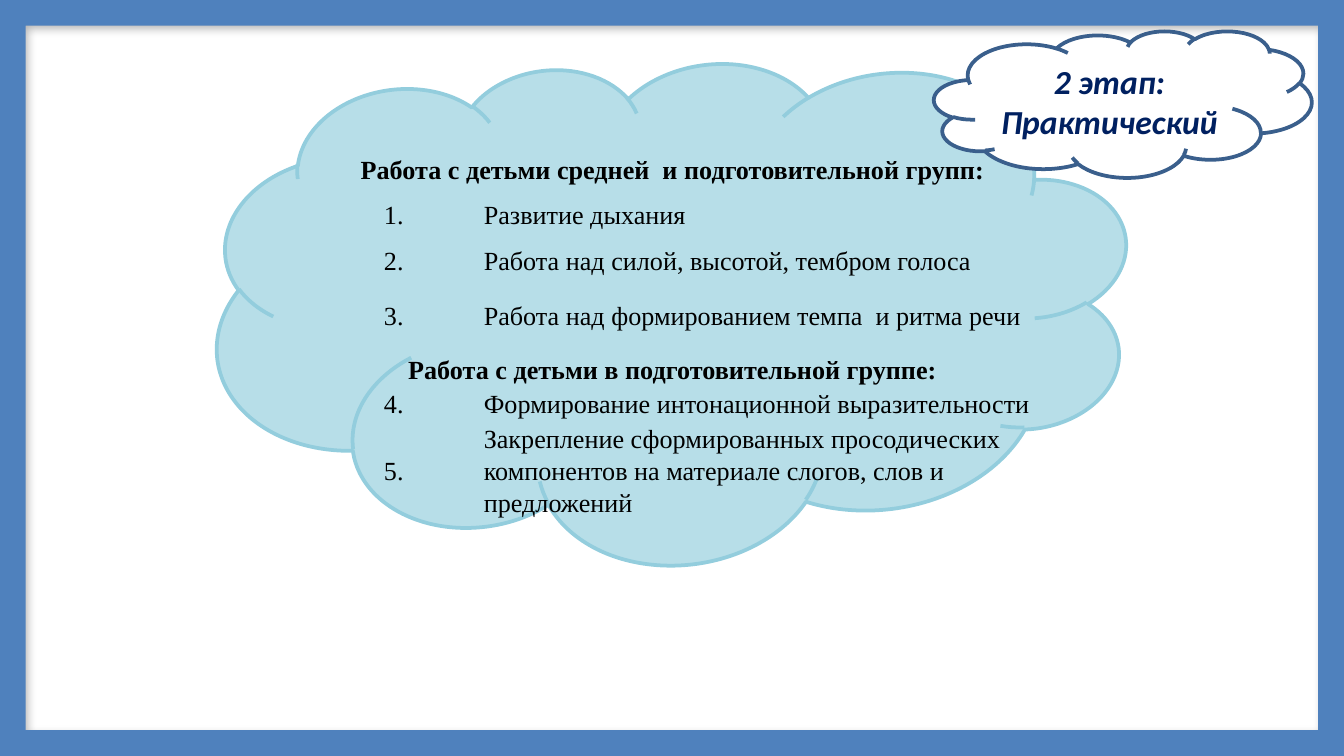
from pptx import Presentation
from pptx.dml.color import RGBColor
from pptx.enum.shapes import MSO_SHAPE
from pptx.enum.text import MSO_ANCHOR, PP_ALIGN
from pptx.oxml import parse_xml
from pptx.oxml.ns import nsdecls, qn
from pptx.util import Inches, Pt

PAGE_WIDTH = 10
PAGE_HEIGHT = PAGE_WIDTH * 9 / 16
NO_GRID_STYLE = "{2D5ABB26-0587-4C30-8999-92F81FD0307C}"
ROWS = [
    (0.24, "", "Работа с детьми средней  и подготовительной групп:"),
    (0.41, "1.", "Развитие дыхания"),
    (0.27, "2.", "Работа над силой, высотой, тембром голоса"),
    (0.55, "3.", "Работа над формированием темпа  и ритма речи"),
    (0.24, "", "Работа с детьми в подготовительной группе:"),
    (0.24, "4.", "Формирование интонационной выразительности"),
    (0.7, "5.", "Закрепление сформированных просодических компонентов "
                "на материале слогов, слов и предложений"),
]


def color(value):
    return RGBColor.from_string(value)


class StagePage:
    """Holds the style and the current slide of the stage page."""

    body_font = "Times New Roman"
    title_font = "Calibri"
    ink = "000000"
    navy = "002060"

    def __init__(self, deck):
        self.page = deck.slides.add_slide(deck.slide_layouts[6])

    def shape(self, kind, left, top, width, height, fill, line=None):
        shape = self.page.shapes.add_shape(
            kind, Inches(left), Inches(top), Inches(width), Inches(height))
        shape.shadow.inherit = False
        shape.fill.solid()
        shape.fill.fore_color.rgb = color(fill)
        if line:
            shape.line.color.rgb = color(line)
            shape.line.width = Pt(2)
        else:
            shape.line.fill.background()
        return shape

    def frame(self, width, height):
        frame = self.shape(MSO_SHAPE.FRAME, 0, 0, width, height, "4F81BD")
        frame.adjustments[0] = 0.034
        effects = frame.element.spPr.find(qn("a:effectLst"))
        effects.append(parse_xml(
            f'<a:outerShdw {nsdecls("a")} blurRad="{Pt(4.5)}" dist="{Pt(2.6)}" '
            f'dir="{53 * 60000}" algn="tl" rotWithShape="0"><a:srgbClr val="000000">'
            '<a:alpha val="30000"/></a:srgbClr></a:outerShdw>'))

    def back_cloud(self):
        cloud = self.shape(MSO_SHAPE.CLOUD, 1.6, 0.41, 6.81, 3.78, "B7DEE8", "93CDDD")
        cloud.rotation = 352.9
        cloud.element.spPr.get_or_add_xfrm().set("flipH", "1")

    def title_cloud(self, text):
        cloud = self.shape(MSO_SHAPE.CLOUD, 6.95, 0.23, 2.81, 1.09, "FFFFFF", "3A5F8C")
        cloud.text_frame.text = text
        cloud.text_frame.word_wrap = True
        cloud.text_frame.vertical_anchor = MSO_ANCHOR.MIDDLE
        para = cloud.text_frame.paragraphs[0]
        para.alignment = PP_ALIGN.CENTER
        self.style(para, self.title_font, 18, self.navy, bold=True, italic=True)

    def style(self, para, font, size, ink, bold=False, italic=False):
        for span in para.runs:
            span.font.name = font
            span.font.size = Pt(size)
            span.font.bold = bold
            span.font.italic = italic
            span.font.color.rgb = color(ink)

    def cell(self, cell, text, align, bold=False, spacing=Pt(17.1)):
        cell.text_frame.text = text
        para = cell.text_frame.paragraphs[0]
        para.alignment = align
        para.line_spacing = spacing
        self.style(para, self.body_font, 14, self.ink, bold)

    def work_table(self, rows):
        frame = self.page.shapes.add_table(
            len(rows), 2, Inches(2.27), Inches(1.13), Inches(5.47), Inches(2.65))
        table = frame.table
        table.first_row = table.horz_banding = False
        table._tbl.tblPr.find(qn("a:tableStyleId")).text = NO_GRID_STYLE
        for column, width in zip(table.columns, (1.32, 4.15)):
            column.width = Inches(width)
        for cell in table.iter_cells():
            cell.fill.background()
            cell.vertical_anchor = MSO_ANCHOR.MIDDLE
            cell.margin_left = cell.margin_right = Inches(0.01)
            cell.margin_top = cell.margin_bottom = Inches(0.01)
        for index, (height, number, text) in enumerate(rows):
            table.rows[index].height = Inches(height)
            first, second = table.cell(index, 0), table.cell(index, 1)
            if number:
                self.cell(first, number, PP_ALIGN.CENTER)
                align = PP_ALIGN.LEFT if number == "5." else PP_ALIGN.JUSTIFY
                spacing = 1.15 if number in ("1.", "2.") else Pt(17.1)
                self.cell(second, text, align, spacing=spacing)
            else:
                first.merge(second)
                self.cell(first, text, PP_ALIGN.CENTER, bold=True)


def main():
    deck = Presentation()
    deck.slide_width, deck.slide_height = Inches(PAGE_WIDTH), Inches(PAGE_HEIGHT)
    stage = StagePage(deck)
    stage.frame(PAGE_WIDTH, PAGE_HEIGHT)
    stage.back_cloud()
    stage.title_cloud("2 этап: Практический")
    stage.work_table(ROWS)
    deck.save("out.pptx")


if __name__ == "__main__":
    main()
